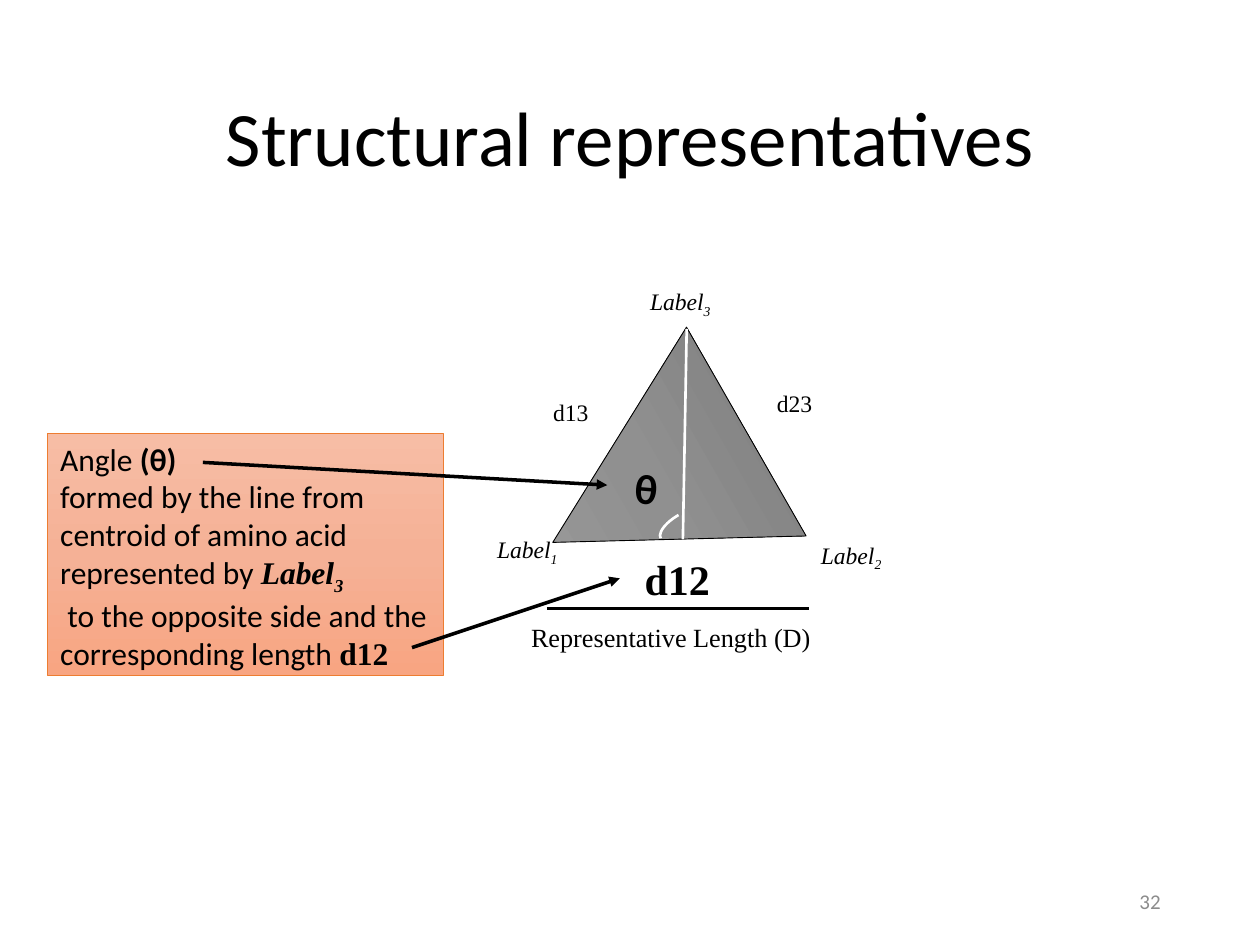
import copy

import pptx
import pptx.dml.color
import pptx.enum.shapes
import pptx.enum.text
import pptx.oxml
import pptx.oxml.ns
import pptx.util

EMU_PER_PX = 9144  # 100 px to the inch
BLACK, WHITE, GREY, ORANGE = "000000", "FFFFFF", "8C8C8C", "ED7D31"
SANS, SERIF = "Calibri", "Times New Roman"
ALIGN = pptx.enum.text.PP_ALIGN
ANCHOR = pptx.enum.text.MSO_ANCHOR
SHAPE = pptx.enum.shapes.MSO_SHAPE


def px(*lengths):
    return [pptx.util.Emu(length * EMU_PER_PX) for length in lengths]


def color(hex_string):
    return pptx.dml.color.RGBColor.from_string(hex_string)


class Sketch:
    """Holds the current slide and draws each kind of element on it."""

    def __init__(self, slide):
        self.slide = slide

    def add_pieces(self, paragraph, pieces, size, ink=BLACK):
        """Pieces are (text, font, style); style letters: b, i, s (subscript)."""
        for text, font, style in pieces:
            run = paragraph.add_run()
            run.text = text
            run.font.name = font
            run.font.size = pptx.util.Pt(size)
            run.font.bold = "b" in style
            run.font.italic = "i" in style
            run.font.color.rgb = color(ink)
            if "s" in style:
                run.font._element.set("baseline", "-25000")

    def text(self, box, pieces, size, ink=BLACK, align=ALIGN.CENTER,
             anchor=ANCHOR.TOP, turn=0):
        label = self.slide.shapes.add_textbox(*px(*box))
        label.rotation = turn
        frame = label.text_frame
        frame.word_wrap = True
        frame.vertical_anchor = anchor
        paragraph = frame.paragraphs[0]
        paragraph.alignment = align
        self.add_pieces(paragraph, pieces, size, ink)
        return paragraph

    def shape(self, preset, box, line, width, gradient=None, turn=0):
        figure = self.slide.shapes.add_shape(preset, *px(*box))
        figure.shadow.inherit = False
        figure.rotation = turn
        figure.line.color.rgb = color(line)
        figure.line.width = pptx.util.Pt(width)
        if gradient:
            self.shade(figure, gradient)
        else:
            figure.fill.background()
        return figure

    def shade(self, figure, gradient):
        """Top-to-bottom gradient with three evenly spaced stops."""
        figure.fill.gradient()
        figure.fill.gradient_angle = 270
        first_stop = figure._element.spPr.xpath("a:gradFill/a:gsLst/a:gs")[0]
        first_stop.addnext(copy.deepcopy(first_stop))
        for index, stop in enumerate(figure.fill.gradient_stops):
            stop.position = index / 2
            stop.color.rgb = color(gradient[index])

    def line(self, start, end, ink, width, arrow=False):
        connector = self.slide.shapes.add_connector(
            pptx.enum.shapes.MSO_CONNECTOR.STRAIGHT, *px(*start, *end))
        connector.line.color.rgb = color(ink)
        connector.line.width = pptx.util.Pt(width)
        if arrow:
            head = pptx.oxml.parse_xml(
                f'<a:tailEnd {pptx.oxml.ns.nsdecls("a")} type="triangle"/>')
            connector.line._get_or_add_ln().append(head)
        connector._element.spPr.append(pptx.oxml.parse_xml(
            f'<a:effectLst {pptx.oxml.ns.nsdecls("a")}/>'))


def main():
    deck = pptx.Presentation()
    deck.slide_width, deck.slide_height = px(1000, 750)
    sketch = Sketch(deck.slides.add_slide(deck.slide_layouts[6]))

    # Title
    title = sketch.text((69, 40, 862, 145), [("Structural representatives", SANS, "")],
                        44, anchor=ANCHOR.MIDDLE)
    title.line_spacing = 0.9

    # Triangle with its median and angle
    sketch.shape(SHAPE.ISOSCELES_TRIANGLE, (420, 298, 191, 177), BLACK, 0.5,
                 ("9D9D9D", "909090", "7C7C7C"), turn=240.2)
    sketch.shape(SHAPE.ARC, (534, 395, 18, 43), WHITE, 1.5, turn=240.2)
    sketch.line((545, 261), (542, 428), WHITE, 1.5)
    sketch.text((482, 362, 62, 50), [("θ", SANS, "b")], 24, turn=4.7)

    # Corner labels
    for number, box in (("1", (335, 420, 167, 33)),
                        ("2", (600, 424, 151, 33)),
                        ("3", (460, 223, 160, 33))):
        sketch.text(box, [("Label", SERIF, "i"), (number, SERIF, "is")], 13.5)

    # Side lengths
    for side, box, size, style in (("d13", (417, 311, 72, 33), 13.5, ""),
                                   ("d23", (591, 304, 79, 33), 13.5, ""),
                                   ("d12", (492, 434, 91, 50), 24, "b")):
        sketch.text(box, [(side, SERIF, style)], size)

    # Representative length
    sketch.line((434, 483), (642, 483), BLACK, 1.5)
    sketch.text((360, 488, 345, 35), [("Representative Length (D)", SERIF, "")], 15)

    # Explanation box
    explanation = sketch.shape(SHAPE.RECTANGLE, (38, 344, 314, 192), ORANGE, 0.5,
                               ("F7BDA5", "F5B196", "F8A582"))
    frame = explanation.text_frame
    frame.word_wrap = True
    frame.vertical_anchor = ANCHOR.TOP
    sentences = (
        [("Angle ", SANS, ""), ("(θ)", SANS, "b")],
        [("formed by the line from centroid of amino acid represented by ", SANS, ""),
         ("Label", SERIF, "bi"), ("3", SERIF, "bis")],
        [(" to the opposite side and the corresponding length ", SANS, ""),
         ("d12", SERIF, "b")],
    )
    for index, pieces in enumerate(sentences):
        paragraph = frame.add_paragraph() if index else frame.paragraphs[0]
        paragraph.alignment = ALIGN.LEFT
        sketch.add_pieces(paragraph, pieces, 18)

    # Arrows from the explanation to the angle and to d12
    sketch.line((161, 367), (482, 385), BLACK, 2, arrow=True)
    sketch.line((327, 514), (492, 459), BLACK, 2, arrow=True)

    # Page number
    sketch.text((706, 695, 225, 40), [("32", SANS, "")], 12, GREY,
                ALIGN.RIGHT, ANCHOR.MIDDLE)

    deck.save("out.pptx")


if __name__ == "__main__":
    main()
